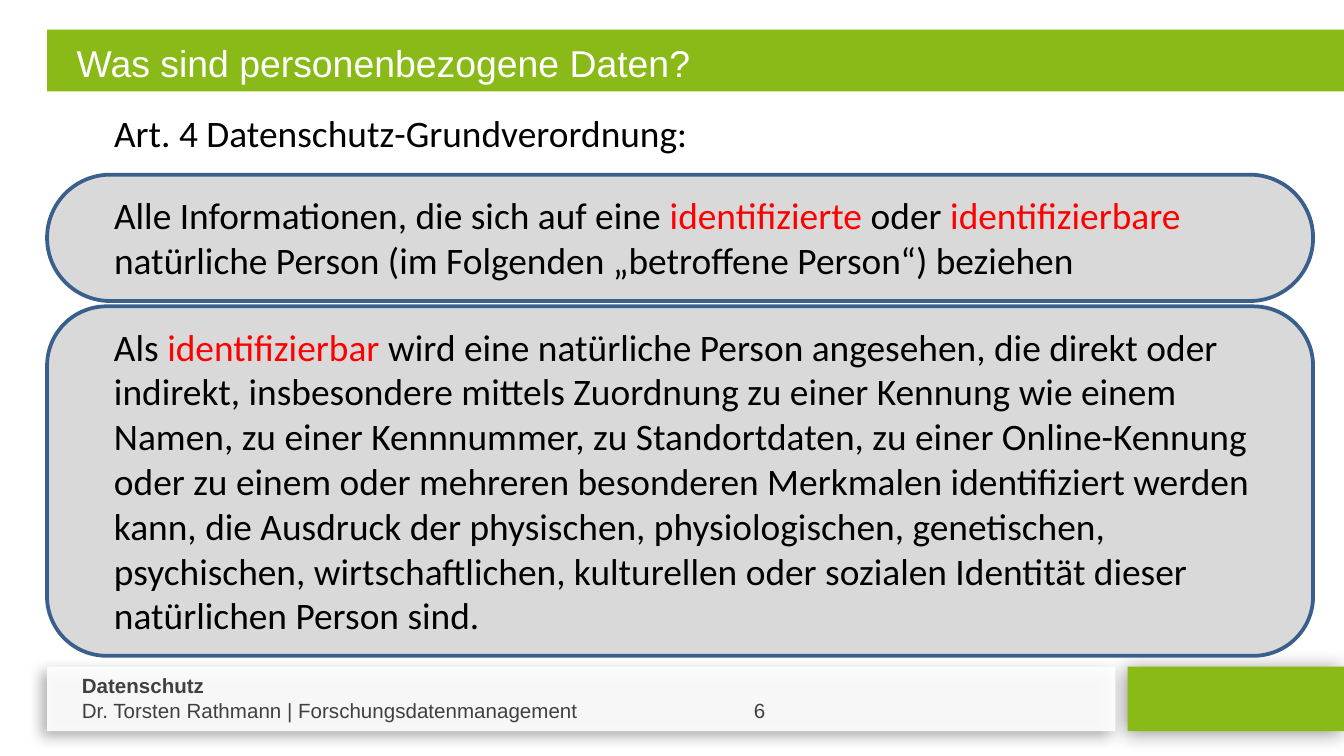
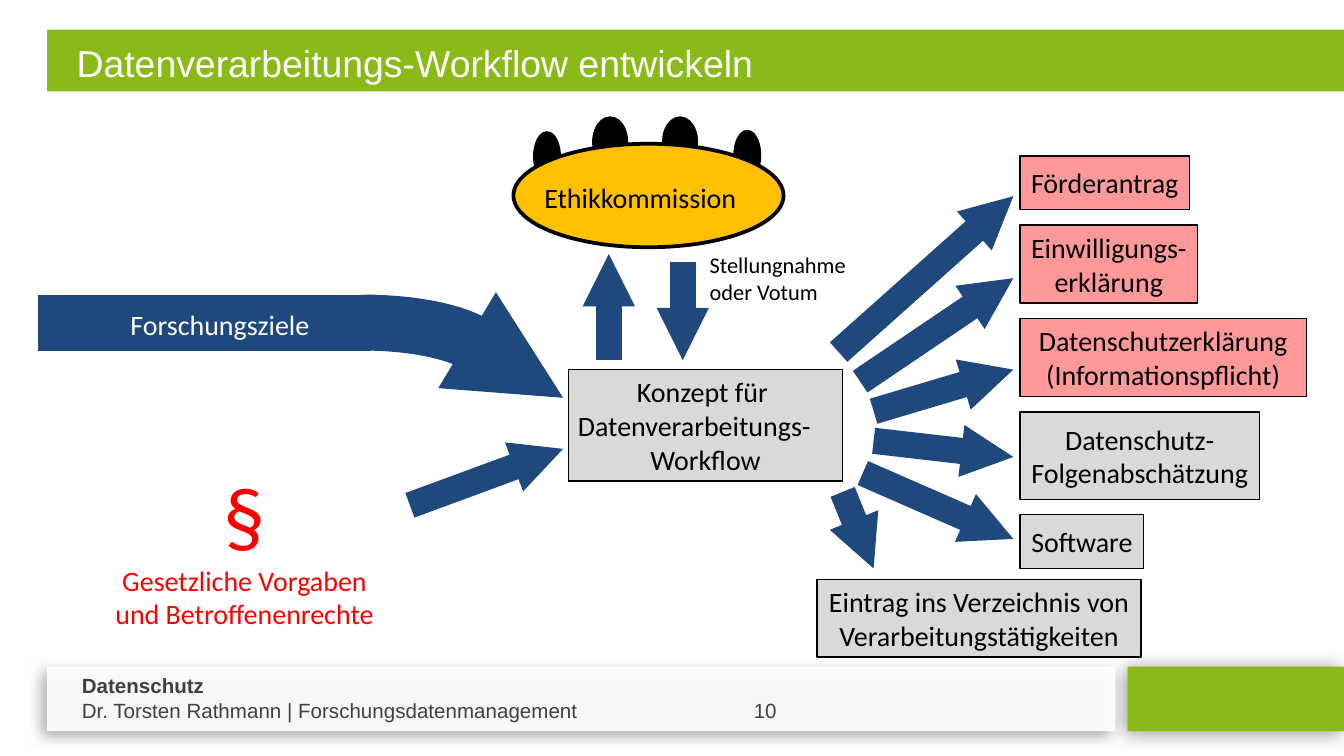
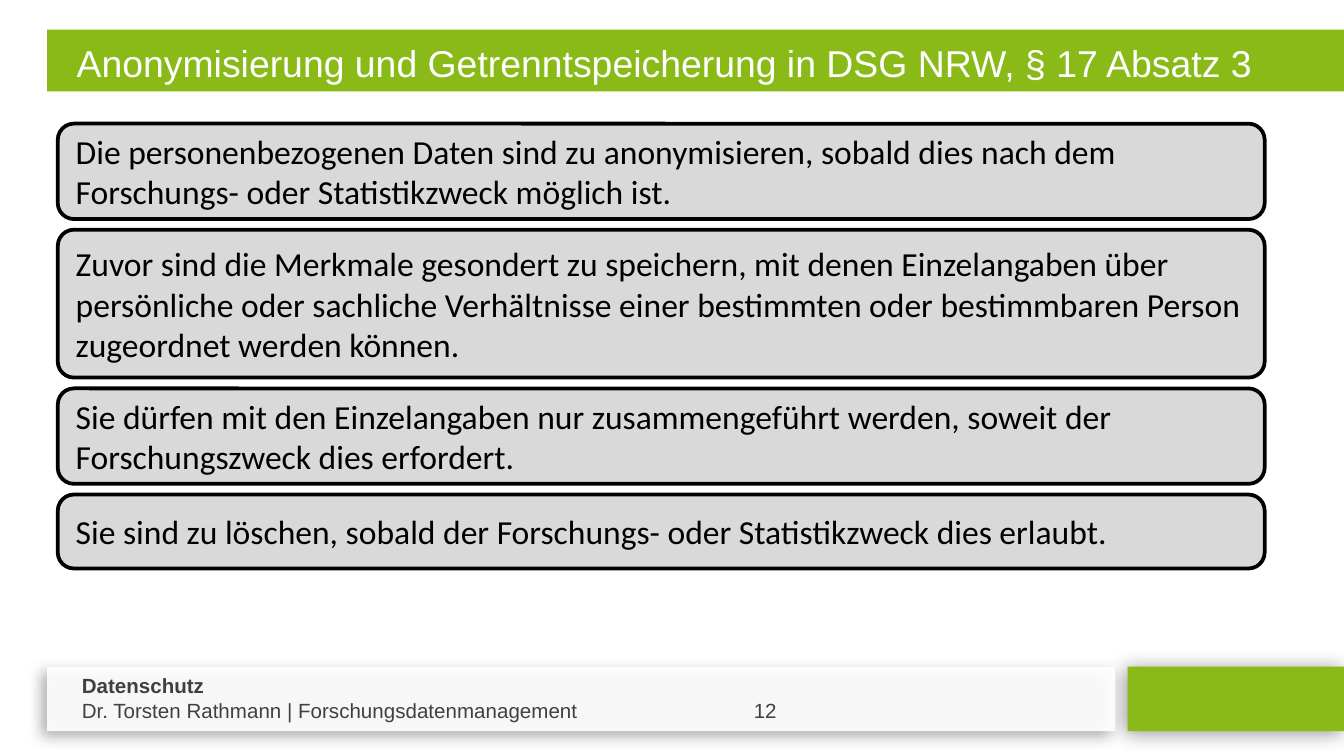
"""Builds three slides on data protection."""
from lxml import etree
from pptx import Presentation
from pptx.dml.color import RGBColor
from pptx.enum import shapes, text
from pptx.oxml import ns
from pptx.util import Inches, Pt

GREEN, BLUE, GREY, PINK = "89BA17", "1F497D", "D9D9D9", "FF9999"
ORANGE, RED, BLACK, WHITE = "FFC000", "FF0000", "000000", "FFFFFF"
OUTLINE, FOOTER = "3A5F8C", "404040"
SLIM = (0.07, 0.04, 0.07, 0.04)
WIDE = (0.1, 0.05, 0.1, 0.05)
KIND = shapes.MSO_SHAPE
ALIGN = text.PP_ALIGN
MIDDLE = text.MSO_ANCHOR.MIDDLE


def rgb(value):
    """Turn a hex string into a colour."""
    return RGBColor.from_string(value)


def child(parent, tag, **attributes):
    """Append a DrawingML element and return it."""
    element = etree.SubElement(parent, ns.qn(tag))
    for key, value in attributes.items():
        element.set(key, str(value))
    return element


def write(shape, lines, size=20, color=BLACK, font="Calibri", bold=False, align=ALIGN.LEFT,
          anchor=text.MSO_ANCHOR.TOP, insets=WIDE, wrap=True, tab=None):
    """Fill a shape with lines, each a string or (string, overrides); *marked* words turn red."""
    frame = shape.text_frame
    frame.word_wrap = wrap
    frame.vertical_anchor = anchor
    frame.margin_left, frame.margin_top, frame.margin_right, frame.margin_bottom = map(Inches, insets)
    for index, line in enumerate(lines):
        content, changes = (line, {}) if isinstance(line, str) else line
        style = {"size": size, "bold": bold, "align": align, **changes}
        paragraph = frame.add_paragraph() if index else frame.paragraphs[0]
        paragraph.alignment = style["align"]
        if tab:
            stops = child(paragraph._p.get_or_add_pPr(), "a:tabLst")
            child(stops, "a:tab", pos=Inches(tab), algn="l")
        for position, part in enumerate(content.split("*")):
            run = paragraph.add_run()
            run.text = part
            run.font.name = font
            run.font.size = Pt(style["size"])
            run.font.bold = style["bold"]
            run.font.color.rgb = rgb(RED if position % 2 else color)


class Deck:
    """Holds the presentation, its shared look and the current slide."""

    def __init__(self):
        """Start an empty 16:9 presentation."""
        self.presentation = Presentation()
        self.presentation.slide_width = Inches(10)
        self.presentation.slide_height = Inches(10) * 9 // 16
        self.slide = None

    def add_slide(self, title, number):
        """Add a slide with footer, title band and title."""
        self.slide = self.presentation.slides.add_slide(self.presentation.slide_layouts[6])
        accent = self.shape(8.39, 4.96, 1.61, 0.48, fill=GREEN)
        self.shadow(accent, alpha=42, blur=10.8, distance=2, angle=142)
        panel = self.shape(0.35, 4.96, 7.95, 0.48, fill=WHITE)
        child(panel._element.spPr.find(".//" + ns.qn("a:srgbClr")), "a:alpha", val=91000)
        self.shadow(panel, alpha=34, blur=7.5, distance=4, angle=145)
        self.textbox(0.51, 4.96, 5.98, 0.47,
                     [("Datenschutz", {"bold": True}),
                      f"Dr. Torsten Rathmann | Forschungsdatenmanagement\t{number}"],
                     size=11, font="Arial", color=FOOTER, tab=5)
        self.shape(0.35, 0.22, 9.69, 0.46, fill=GREEN)
        self.textbox(0.35, 0.22, 9.69, 0.35, [title], font="Arial", color=WHITE,
                     insets=(0.22, 0.08, 0.1, 0.05))

    def shape(self, left, top, width, height, kind=KIND.RECTANGLE, fill=None, line=None,
              weight=2, adjust=()):
        """Add a preset shape without a shadow."""
        shape = self.slide.shapes.add_shape(kind, *map(Inches, (left, top, width, height)))
        shape.shadow.inherit = False
        for index, value in enumerate(adjust):
            shape.adjustments[index] = value
        if fill:
            shape.fill.solid()
            shape.fill.fore_color.rgb = rgb(fill)
        else:
            shape.fill.background()
        if line:
            shape.line.color.rgb = rgb(line)
            shape.line.width = Pt(weight)
        else:
            shape.line.fill.background()
        return shape

    def shadow(self, shape, alpha, blur, distance, angle):
        """Give a shape a soft black outer shadow."""
        effects = shape._element.spPr.find(ns.qn("a:effectLst"))
        outer = child(effects, "a:outerShdw", blurRad=Pt(blur), dist=Pt(distance),
                      dir=angle * 60000, algn="ctr", rotWithShape=0)
        child(child(outer, "a:srgbClr", val=BLACK), "a:alpha", val=alpha * 1000)

    def textbox(self, left, top, width, height, lines, **style):
        """Add a text box."""
        box = self.slide.shapes.add_textbox(*map(Inches, (left, top, width, height)))
        write(box, lines, **style)

    def box(self, left, top, width, height, lines, fill=GREY):
        """Add a thinly outlined box of the workflow."""
        shape = self.shape(left, top, width, height, fill=fill, line=BLACK, weight=0.75)
        write(shape, lines, size=15, align=ALIGN.CENTER, anchor=MIDDLE, insets=SLIM, wrap=False)

    def line(self, start, end, weight=14, arrow=True):
        """Add a thick blue line, usually with an arrowhead."""
        connector = self.slide.shapes.add_connector(
            shapes.MSO_CONNECTOR.STRAIGHT, *map(Inches, (*start, *end)))
        connector.line.color.rgb = rgb(BLUE)
        connector.line.width = Pt(weight)
        if arrow:
            child(connector.get_or_add_ln(), "a:tailEnd", type="triangle", w="sm", len="sm")
        child(connector._element.spPr, "a:effectLst")


def definition_slide(deck):
    """Quote the legal definition of personal data."""
    deck.add_slide("Was sind personenbezogene Daten?", 6)
    panels = [
        (1.3, 0.94, 0.5, 9.02,
         "Alle Informationen, die sich auf eine *identifizierte* oder *identifizierbare* "
         "natürliche Person (im Folgenden „betroffene Person“) beziehen"),
        (2.28, 2.6, 0.17, 8.74,
         "Als *identifizierbar* wird eine natürliche Person angesehen, die direkt oder indirekt, "
         "insbesondere mittels Zuordnung zu einer Kennung wie einem Namen, zu einer Kennnummer, "
         "zu Standortdaten, zu einer Online-Kennung oder zu einem oder mehreren besonderen "
         "Merkmalen identifiziert werden kann, die Ausdruck der physischen, physiologischen, "
         "genetischen, psychischen, wirtschaftlichen, kulturellen oder sozialen Identität dieser "
         "natürlichen Person sind."),
    ]
    for top, height, corner, text_width, content in panels:
        deck.shape(0.35, top, 9.42, height, KIND.ROUNDED_RECTANGLE, GREY, OUTLINE, adjust=[corner])
        deck.textbox(0.75, top + 0.08, text_width, height - 0.16, [content])
    deck.textbox(0.75, 0.77, 4.51, 0.44, ["Art. 4 Datenschutz-Grundverordnung:"], wrap=False)


def workflow_slide(deck):
    """Draw the workflow from goals and law to documents."""
    deck.add_slide("Datenverarbeitungs-Workflow entwickeln", 10)
    for left, top, width in [(4.42, 0.88, 0.24), (4.94, 0.88, 0.24),
                             (5.47, 0.98, 0.18), (3.98, 0.99, 0.18)]:
        deck.shape(left, top, width, 0.35, KIND.OVAL, BLACK, BLACK)
    deck.shape(3.82, 1.07, 2.01, 0.77, KIND.OVAL, ORANGE, BLACK)
    small = {"size": 15, "insets": SLIM, "wrap": False}
    label = deck.shape(3.98, 1.3, 1.6, 0.33, fill=ORANGE)
    write(label, ["Ethikkommission"], **small)

    deck.line((0.28, 2.4), (2.76, 2.4), weight=30, arrow=False)
    deck.shape(1.75, 2.4, 1.89, 0.59, KIND.ARC, line=BLUE, weight=30, adjust=[162, 210.08])
    deck.line((3.79, 2.72), (4.19, 2.96), weight=30)
    deck.textbox(0.9, 2.25, 1.5, 0.33, ["Forschungsziele"], color=WHITE, **small)
    deck.textbox(0.77, 3.4, 2.1, 1.34,
                 [("§", {"size": 45}), "Gesetzliche Vorgaben", "und Betroffenenrechte"],
                 color=RED, align=ALIGN.CENTER, **small)
    deck.textbox(5.21, 1.83, 1.41, 0.48, ["Stellungnahme oder Votum"], size=12, insets=SLIM)

    deck.box(4.23, 2.75, 2.04, 0.83,
             ["Konzept für ", ("Datenverarbeitungs-", {"align": ALIGN.LEFT}), "Workflow"])
    deck.box(6.08, 4.31, 2.41, 0.58, ["Eintrag ins Verzeichnis von", "Verarbeitungstätigkeiten"])
    for start, end in [((3.05, 3.76), (4.19, 3.34)), ((6.27, 3.66), (6.5, 4.23)),
                       ((4.53, 2.68), (4.53, 1.89)), ((5.08, 1.95), (5.08, 2.68))]:
        deck.line(start, end)

    results = [
        (1.26, 0.4, PINK, ["Förderantrag"], (6.24, 2.62), 1.46),
        (1.32, 0.58, PINK, ["Einwilligungs-", "erklärung"], (6.4, 2.84), 2.07),
        (2.13, 0.58, PINK, ["Datenschutzerklärung", "(Informationspflicht)"], (6.5, 3.06), 2.75),
        (1.78, 0.65, GREY, ["Datenschutz-", "Folgenabschätzung"], (6.5, 3.28), 3.4),
        (0.92, 0.4, GREY, ["Software"], (6.42, 3.52), 4.01),
    ]
    top, bottom = 1.16, 4.23
    gap = (bottom - top - sum(result[1] for result in results)) / (len(results) - 1)
    for width, height, fill, lines, start, target in results:
        deck.line(start, (7.54, target))
        deck.box(7.59, top, width, height, lines, fill)
        top += height + gap


def storage_slide(deck):
    """List the rules on anonymising and separate storage."""
    deck.add_slide("Anonymisierung und Getrenntspeicherung in DSG NRW, § 17 Absatz 3", 12)
    rules = [
        (0.71, "Die personenbezogenen Daten sind zu anonymisieren, sobald dies nach dem "
               "Forschungs- oder Statistikzweck möglich ist."),
        (1.1, "Zuvor sind die Merkmale gesondert zu speichern, mit denen Einzelangaben über "
              "persönliche oder sachliche Verhältnisse einer bestimmten oder bestimmbaren Person "
              "zugeordnet werden können."),
        (0.71, "Sie dürfen mit den Einzelangaben nur zusammengeführt werden, soweit der "
               "Forschungszweck dies erfordert."),
        (0.55, "Sie sind zu löschen, sobald der Forschungs- oder Statistikzweck dies erlaubt."),
    ]
    top, gap, radius = 0.92, 0.08, 0.12
    for height, content in rules:
        panel = deck.shape(0.43, top, 8.98, height, KIND.ROUNDED_RECTANGLE, GREY, BLACK,
                           adjust=[radius / height])
        write(panel, [content], size=18, anchor=MIDDLE)
        top += height + gap


def main():
    """Build and save the slides."""
    deck = Deck()
    definition_slide(deck)
    workflow_slide(deck)
    storage_slide(deck)
    deck.presentation.save("out.pptx")


if __name__ == "__main__":
    main()
